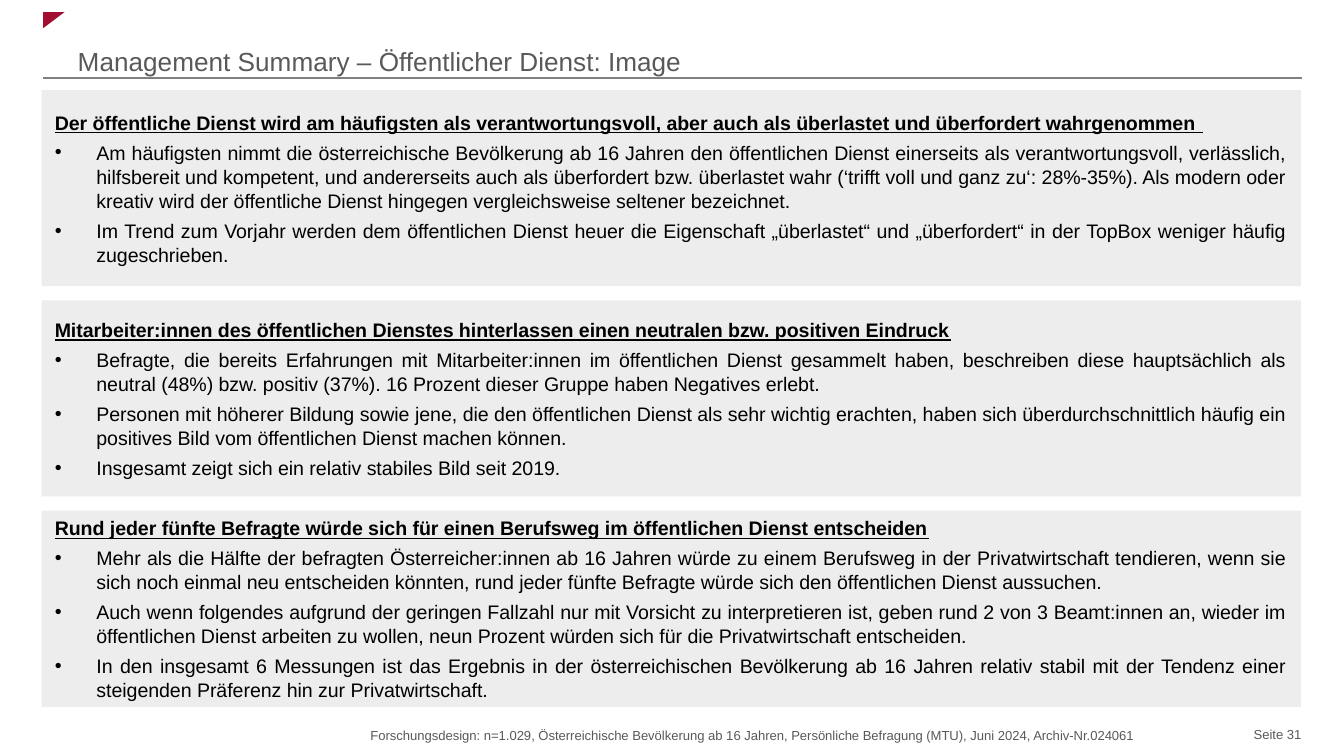
import pptx
import pptx.dml.color
import pptx.enum.shapes
import pptx.enum.text
import pptx.oxml.ns
import pptx.util
from lxml import etree

Inches, Pt = pptx.util.Inches, pptx.util.Pt
SHAPE = pptx.enum.shapes.MSO_SHAPE
ALIGN = pptx.enum.text.PP_ALIGN
ANCHOR = pptx.enum.text.MSO_ANCHOR
qn = pptx.oxml.ns.qn

COLORS = {"text": "000000", "muted": "595959", "panel": "EDEDED",
          "accent": "A20E2F", "rule": "808080"}

SLIDE_WIDTH = 10
SLIDE_HEIGHT = SLIDE_WIDTH * 9 / 16
PANEL_LEFT, PANEL_WIDTH, PANEL_HEIGHT = 0.31, 9.37, 1.46
FIRST_TOP, LAST_TOP = 0.67, 3.8

PANELS = [
    ("Der öffentliche Dienst wird am häufigsten als verantwortungsvoll, aber auch als überlastet und überfordert wahrgenommen ", [
        "Am häufigsten nimmt die österreichische Bevölkerung ab 16 Jahren den öffentlichen Dienst einerseits als verantwortungsvoll, verlässlich, hilfsbereit und kompetent, und andererseits auch als überfordert bzw. überlastet wahr (‘trifft voll und ganz zu‘: 28%-35%). Als modern oder kreativ wird der öffentliche Dienst hingegen vergleichsweise seltener bezeichnet.",
        "Im Trend zum Vorjahr werden dem öffentlichen Dienst heuer die Eigenschaft „überlastet“ und „überfordert“ in der TopBox weniger häufig zugeschrieben.",
    ]),
    ("Mitarbeiter:innen des öffentlichen Dienstes hinterlassen einen neutralen bzw. positiven Eindruck", [
        "Befragte, die bereits Erfahrungen mit Mitarbeiter:innen im öffentlichen Dienst gesammelt haben, beschreiben diese hauptsächlich als neutral (48%) bzw. positiv (37%). 16 Prozent dieser Gruppe haben Negatives erlebt.",
        "Personen mit höherer Bildung sowie jene, die den öffentlichen Dienst als sehr wichtig erachten, haben sich überdurchschnittlich häufig ein positives Bild vom öffentlichen Dienst machen können.",
        "Insgesamt zeigt sich ein relativ stabiles Bild seit 2019.",
    ]),
    ("Rund jeder fünfte Befragte würde sich für einen Berufsweg im öffentlichen Dienst entscheiden", [
        "Mehr als die Hälfte der befragten Österreicher:innen ab 16 Jahren würde zu einem Berufsweg in der Privatwirtschaft tendieren, wenn sie sich noch einmal neu entscheiden könnten, rund jeder fünfte Befragte würde sich den öffentlichen Dienst aussuchen.",
        "Auch wenn folgendes aufgrund der geringen Fallzahl nur mit Vorsicht zu interpretieren ist, geben rund 2 von 3 Beamt:innen an, wieder im öffentlichen Dienst arbeiten zu wollen, neun Prozent würden sich für die Privatwirtschaft entscheiden.",
        "In den insgesamt 6 Messungen ist das Ergebnis in der österreichischen Bevölkerung ab 16 Jahren relativ stabil mit der Tendenz einer steigenden Präferenz hin zur Privatwirtschaft.",
    ]),
]


def rgb(name):
    return pptx.dml.color.RGBColor.from_string(COLORS[name])


class SlideBuilder:
    font = "Arial"
    body_size = 10.5
    indent = 0.31

    def __init__(self, slide):
        self.s = slide

    def style(self, p, size, color, bold=False):
        for r in p.runs:
            r.font.name = self.font
            r.font.size = Pt(size)
            r.font.color.rgb = rgb(color)
            r.font.bold = r.font.underline = bold

    def label(self, text, box, size, align=ALIGN.LEFT, anchor=ANCHOR.TOP, bottom=0.05):
        sp = self.s.shapes.add_textbox(*map(Inches, box))
        tf = sp.text_frame
        tf.word_wrap = True
        tf.vertical_anchor = anchor
        tf.margin_bottom = Inches(bottom)
        p = tf.paragraphs[0]
        p.text = text
        p.alignment = align
        self.style(p, size, "muted")

    def shape(self, kind, box, color):
        sp = self.s.shapes.add_shape(kind, *map(Inches, box))
        sp.shadow.inherit = False
        sp.fill.solid()
        sp.fill.fore_color.rgb = rgb(color)
        sp.line.fill.background()
        return sp

    def rule(self, left, right, y):
        line = self.s.shapes.add_connector(
            pptx.enum.shapes.MSO_CONNECTOR.STRAIGHT,
            Inches(left), Inches(y), Inches(right), Inches(y))
        line.line.color.rgb = rgb("rule")
        line.line.width = Pt(0.75)
        etree.SubElement(line._element.spPr, qn("a:effectLst"))

    def bullet(self, p):
        pPr = p._p.get_or_add_pPr()
        pPr.set("marL", str(Inches(self.indent)))
        pPr.set("indent", str(-Inches(self.indent)))
        etree.SubElement(pPr, qn("a:buFont"), typeface=self.font)
        etree.SubElement(pPr, qn("a:buChar"), char="•")

    def panel(self, top, heading, points):
        sp = self.shape(SHAPE.RECTANGLE, (PANEL_LEFT, top, PANEL_WIDTH, PANEL_HEIGHT), "panel")
        tf = sp.text_frame
        tf.word_wrap = True
        tf.vertical_anchor = ANCHOR.MIDDLE
        for i, text in enumerate([heading, *points]):
            p = tf.add_paragraph() if i else tf.paragraphs[0]
            p.text = text
            p.alignment = ALIGN.JUSTIFY
            p.line_spacing = 1.03
            p.space_after = Pt(3)
            if i:
                self.bullet(p)
            self.style(p, self.body_size, "text", bold=i == 0)


def main():
    prs = pptx.Presentation()
    prs.slide_width, prs.slide_height = Inches(SLIDE_WIDTH), Inches(SLIDE_HEIGHT)
    b = SlideBuilder(prs.slides.add_slide(prs.slide_layouts[6]))

    b.label("Forschungsdesign: n=1.029, Österreichische Bevölkerung ab 16 Jahren, Persönliche Befragung (MTU), Juni 2024, Archiv-Nr.024061",
            (2, 5.36, 7.19, 0.22), 7, align=ALIGN.CENTER)
    b.label("Seite 31", (9.23, 5.16, 0.74, 0.36), 7, anchor=ANCHOR.BOTTOM, bottom=0)
    b.shape(SHAPE.RIGHT_TRIANGLE, (0.34, 0.07, 0.12, 0.16), "accent").rotation = 90
    b.rule(0.32, 9.69, 0.58)
    b.label("Management Summary – Öffentlicher Dienst: Image",
            (0.48, 0.1, 8.22, 0.47), 14, anchor=ANCHOR.BOTTOM, bottom=0)

    pitch = (LAST_TOP - FIRST_TOP) / (len(PANELS) - 1)
    for i, (heading, points) in enumerate(PANELS):
        b.panel(FIRST_TOP + i * pitch, heading, points)

    prs.save("out.pptx")


if __name__ == "__main__":
    main()
